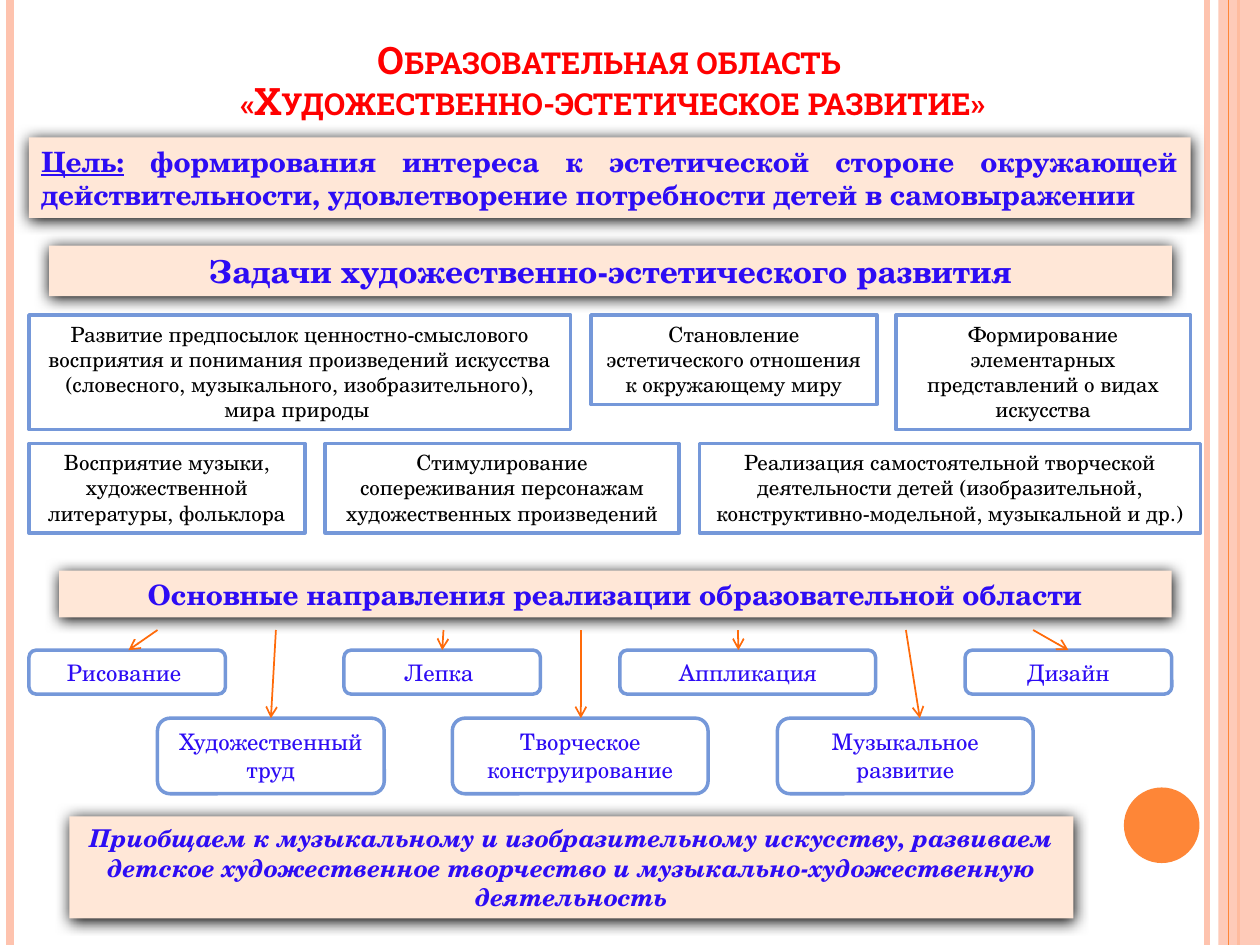
from lxml import etree
from pptx import Presentation
from pptx.dml.color import RGBColor
from pptx.enum.shapes import MSO_CONNECTOR as Connector, MSO_SHAPE as Shape
from pptx.enum.text import MSO_ANCHOR as Anchor, MSO_AUTO_SIZE as AutoSize, PP_ALIGN as Align
from pptx.oxml.ns import qn
from pptx.util import Inches, Pt

COLORS = {
    "peach": "FEC3AE", "orange": "FE8637", "arrow": "FF6B0A", "panel": "FFE7D7",
    "white": "FFFFFF", "border": "7598D9", "blue": "2D0CF4", "black": "000000", "red": "FF0000",
}
RGB = {name: RGBColor.from_string(value) for name, value in COLORS.items()}
BODY_FONT = "TeX Gyre Schola"

deck = Presentation()
deck.slide_width, deck.slide_height = Inches(10), Inches(7.5)
page = deck.slides.add_slide(deck.slide_layouts[6])


def add_line(start, end, color, width):
    line = page.shapes.add_connector(Connector.STRAIGHT, *map(Inches, start + end))
    line.line.color.rgb = RGB[color]
    line.line.width = Pt(width)
    etree.SubElement(line._element.spPr, qn("a:effectLst"))
    return line


def add_box(kind, place, fill, border=None, spans=(), align=Align.CENTER, anchor=Anchor.TOP, **font):
    box = page.shapes.add_shape(kind, *map(Inches, place))
    box.shadow.inherit = False
    box.fill.solid()
    box.fill.fore_color.rgb = RGB[fill]
    if border:
        box.line.color.rgb = RGB[border]
        box.line.width = Pt(2)
    else:
        box.line.fill.background()
    if spans:
        frame = box.text_frame
        frame.word_wrap = True
        frame.auto_size = AutoSize.SHAPE_TO_FIT_TEXT
        frame.vertical_anchor = anchor
        para = frame.paragraphs[0]
        para.alignment = align
        for text, extra in spans:
            span = para.add_run()
            span.text = text
            span.font.color.rgb = RGB[font["color"]]
            formats = {"name": BODY_FONT, "size": Pt(font["size"]), "bold": False, **extra}
            for name, value in formats.items():
                setattr(span.font, name, value)
    return box


for x, color, width in [(9.58, "peach", 3), (0.08, "peach", 4.5), (9.83, "orange", 1.5)]:
    add_line((x, 0), (x, 7.5), color, width)
strip = add_box(Shape.RECTANGLE, (9.67, 0, 0.33, 7.5), "peach")
strip_color = strip._element.spPr.find(qn("a:solidFill"))[0]
etree.SubElement(strip_color, qn("a:alpha"), val="87000")
add_line((9.75, 0), (9.75, 7.5), "orange", 0.75)
add_box(Shape.OVAL, (8.92, 6.25, 0.6, 0.6), "orange")

title = page.shapes.add_textbox(*map(Inches, (0.78, 0.16, 8.17, 0.87)))
title.text_frame.word_wrap = True
title.text_frame.vertical_anchor = Anchor.BOTTOM
heading = title.text_frame.paragraphs[0]
heading.text = "Образовательная область \v«Художественно-эстетическое развитие»"
heading.alignment = Align.CENTER
heading.line_spacing = 0.9
for span in heading.runs:
    for name, value in {"name": "Roboto Slab", "size": Pt(21.6), "bold": True}.items():
        setattr(span.font, name, value)
    span.font.color.rgb = RGB["red"]
    span.font._element.set("cap", "small")

bold = {"bold": True}
panels = [
    ((0.23, 1.09, 9.22, 0.64), 16, Align.JUSTIFY, [
        ("Цель:", {"bold": True, "underline": True}),
        (" формирования интереса к эстетической стороне окружающей действительности, "
         "удовлетворение потребности детей в самовыражении", bold)]),
    ((0.39, 1.95, 8.91, 0.4), 18, Align.CENTER,
     [("Задачи художественно-эстетического развития", bold)]),
    ((0.47, 4.53, 8.83, 0.37), 16, Align.CENTER,
     [("Основные направления реализации образовательной области", bold)]),
    ((0.55, 6.48, 7.97, 0.81), 14, Align.CENTER,
     [("Приобщаем к музыкальному и изобразительному искусству, развиваем детское художественное "
       "творчество и музыкально-художественную деятельность", {"bold": True, "italic": True})]),
]
for place, size, align, spans in panels:
    panel = add_box(Shape.RECTANGLE, place, "panel", None, spans, align, Anchor.MIDDLE,
                    size=size, color="blue")
    effects = panel._element.spPr.find(qn("a:effectLst"))
    shadow = etree.SubElement(effects, qn("a:outerShdw"), blurRad=str(Pt(8.5)), dist=str(Pt(1)),
                              dir="5400000", algn="ctr", rotWithShape="0")
    etree.SubElement(shadow, qn("a:srgbClr"), val=COLORS["black"])

tasks = [
    (2.5, [
        (0.23, 4.3, 0.91, "Развитие предпосылок ценностно-смыслового восприятия и понимания произведений "
         "искусства (словесного, музыкального, изобразительного), мира природы "),
        (4.69, 2.27, 0.71, "Становление эстетического отношения к окружающему миру"),
        (7.11, 2.34, 0.91, "Формирование элементарных представлений о видах искусства")]),
    (3.52, [
        (0.23, 2.19, 0.71, "Восприятие музыки, художественной литературы, фольклора"),
        (2.58, 2.81, 0.71, "Стимулирование сопереживания персонажам художественных произведений"),
        (5.55, 3.98, 0.71, "Реализация самостоятельной творческой деятельности детей (изобразительной, "
         "конструктивно-модельной, музыкальной и др.)")]),
]
for top, row in tasks:
    for left, width, height, text in row:
        add_box(Shape.RECTANGLE, (left, top, width, height), "white", "border", [(text, {})],
                size=12, color="black")

directions = [
    (5.16, 0.35, [
        (0.23, 1.56, "Рисование ", 1.25, 1.02),
        (2.73, 1.56, "Лепка ", 3.52, 3.51),
        (4.92, 2.03, "Аппликация", 5.86, 5.86),
        (7.66, 1.64, "Дизайн", 8.2, 8.48)]),
    (5.7, 0.6, [
        (1.25, 1.8, "Художественный труд", 2.19, 2.15),
        (3.59, 2.03, "Творческое конструирование", 4.61, 4.61),
        (6.17, 2.03, "Музыкальное развитие", 7.19, 7.3)]),
]
for top, height, row in directions:
    for left, width, text, start, end in row:
        add_box(Shape.ROUNDED_RECTANGLE, (left, top, width, height), "white", "border", [(text, {})],
                size=13, color="blue")
        arrow = add_line((start, 5), (end, top), "arrow", 1)
        etree.SubElement(arrow.line._get_or_add_ln(), qn("a:tailEnd"), type="arrow")

deck.save("out.pptx")
